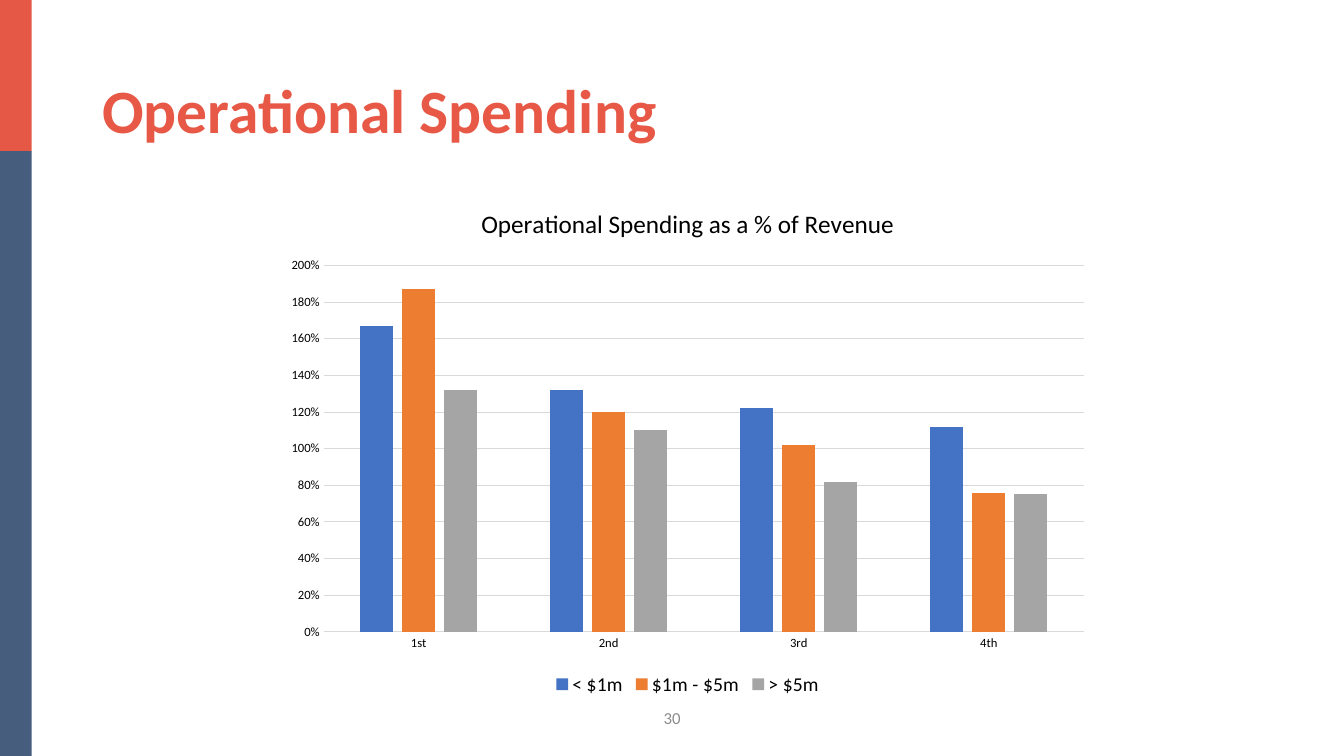
from pptx import Presentation
from pptx.chart.data import CategoryChartData
from pptx.dml.color import RGBColor
from pptx.enum.chart import XL_CHART_TYPE, XL_LEGEND_POSITION, XL_TICK_MARK
from pptx.enum.shapes import MSO_SHAPE
from pptx.enum.text import MSO_ANCHOR, PP_ALIGN
from pptx.util import Cm, Pt

RECTANGLE = MSO_SHAPE.RECTANGLE
COLUMNS = XL_CHART_TYPE.COLUMN_CLUSTERED
LEGEND_BOTTOM = XL_LEGEND_POSITION.BOTTOM
NO_TICKS = XL_TICK_MARK.NONE
MIDDLE = MSO_ANCHOR.MIDDLE
LEFT, CENTER = PP_ALIGN.LEFT, PP_ALIGN.CENTER

FONT = "Calibri"
RED, SLATE = "E65846", "475D7E"
TITLE_RED, NUMBER_GRAY = "E75846", "8C8C8C"
BLACK, GRID_GRAY = "000000", "D9D9D9"

QUARTERS = ["1st", "2nd", "3rd", "4th"]
SPENDING = [
    ("< $1m", "4472C4", [1.67, 1.32, 1.22, 1.12]),
    ("$1m - $5m", "ED7D31", [1.87, 1.20, 1.02, 0.76]),
    ("> $5m", "A5A5A5", [1.32, 1.10, 0.82, 0.75]),
]


def color(value):
    return RGBColor.from_string(value)


def style_font(font, size, fill, bold=False):
    font.name = FONT
    font.size = Pt(size)
    font.bold = bold
    font.color.rgb = color(fill)


def style_line(line, fill):
    line.color.rgb = color(fill)
    line.width = Pt(0.75)


def add_band(page, top, height, fill):
    band = page.shapes.add_shape(RECTANGLE, 0, top, Cm(0.8), height)
    band.shadow.inherit = False
    band.fill.solid()
    band.fill.fore_color.rgb = color(fill)
    band.line.fill.background()


def add_text(page, frame, text, size, fill, bold=False, align=LEFT, spacing=1.0):
    """Add a one-line text box; frame is left, top, width and height in cm."""
    box = page.shapes.add_textbox(*map(Cm, frame))
    box.text_frame.word_wrap = True
    box.text_frame.vertical_anchor = MIDDLE
    para = box.text_frame.paragraphs[0]
    para.alignment = align
    para.line_spacing = spacing
    span = para.add_run()
    span.text = text
    style_font(span.font, size, fill, bold)


def style_axis(axis):
    axis.major_tick_mark = NO_TICKS
    axis.minor_tick_mark = NO_TICKS
    style_font(axis.tick_labels.font, 9, BLACK)


def style_axes(chart):
    quarters, share = chart.category_axis, chart.value_axis
    style_axis(quarters)
    style_line(quarters.format.line, GRID_GRAY)
    style_axis(share)
    share.format.line.fill.background()
    share.minimum_scale, share.maximum_scale = 0, 2
    share.major_unit = 0.2
    share.tick_labels.number_format = "0%"
    share.tick_labels.number_format_is_linked = False
    style_line(share.major_gridlines.format.line, GRID_GRAY)


def add_spending_chart(page, frame, title):
    """Add the column chart; frame is left, top, width and height in cm."""
    data = CategoryChartData(number_format="0%")
    data.categories = QUARTERS
    for name, _, values in SPENDING:
        data.add_series(name, values)
    chart = page.shapes.add_chart(COLUMNS, *map(Cm, frame), data).chart
    style_font(chart.font, 10, BLACK)

    chart.has_title = True
    span = chart.chart_title.text_frame.paragraphs[0].add_run()
    span.text = title
    style_font(span.font, 18, BLACK)
    chart.chart_title.include_in_layout = False

    chart.has_legend = True
    chart.legend.position = LEGEND_BOTTOM
    chart.legend.include_in_layout = False
    style_font(chart.legend.font, 14, BLACK)

    style_axes(chart)
    plot = chart.plots[0]
    plot.gap_width = 219
    plot.overlap = -27
    plot.vary_by_categories = False
    for series, (_, fill, _) in zip(plot.series, SPENDING):
        series.format.fill.solid()
        series.format.fill.fore_color.rgb = color(fill)
        series.invert_if_negative = False


def main():
    deck = Presentation()
    deck.slide_width, deck.slide_height = Cm(33.87), Cm(19.05)
    page = deck.slides.add_slide(deck.slide_layouts[6])

    red_height = Cm(3.81)
    add_band(page, 0, red_height, RED)
    add_band(page, red_height, deck.slide_height - red_height, SLATE)
    add_text(page, (2.33, 1.01, 29.21, 3.68), "Operational Spending",
             44, TITLE_RED, bold=True, spacing=0.9)
    add_text(page, (13.13, 17.58, 7.62, 1.01), "30", 12, NUMBER_GRAY, align=CENTER)
    add_spending_chart(page, (6.93, 4.7, 20.8, 12.95),
                       "Operational Spending as a % of Revenue")
    deck.save("out.pptx")


if __name__ == "__main__":
    main()
